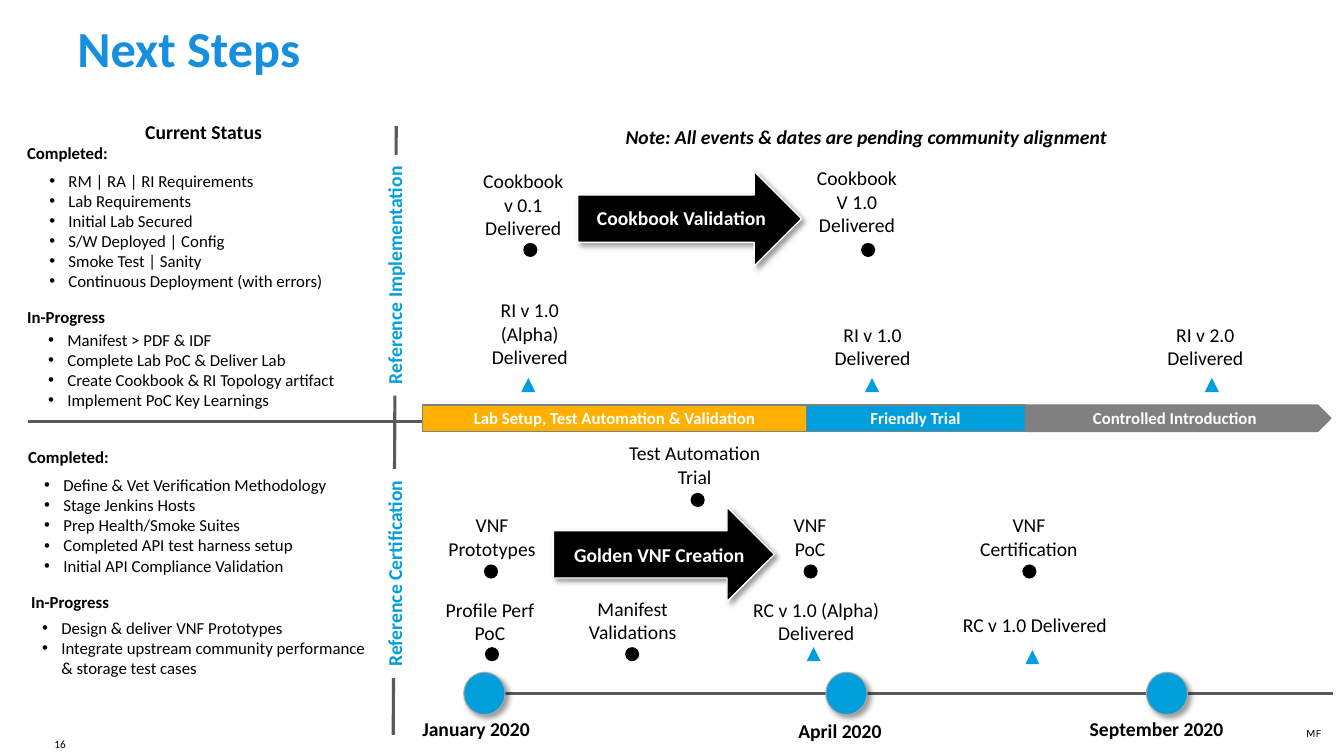
from lxml import etree
from pptx import Presentation
from pptx import util as u
from pptx.dml.color import RGBColor
from pptx.enum import shapes, text
from pptx.oxml import ns

COLORS = {
    "title": "168FDF", "blue": "009FDB", "amber": "FFB000", "gray": "808080",
    "rim": "A6A6A6", "rule": "5A5A5A", "black": "000000", "white": "FFFFFF",
}
KIND = shapes.MSO_SHAPE
CENTER = text.PP_ALIGN.CENTER
MIDDLE = text.MSO_ANCHOR.MIDDLE
MARK = 0.14


class RoadmapSlide:
    def __init__(self, deck, font="Calibri"):
        self.font = font
        self.page = deck.slides.add_slide(deck.slide_layouts[6])

    def color(self, name):
        return RGBColor.from_string(COLORS[name])

    def fill_text(self, frame, lines, size, color="black", bold=False, italic=False,
                  align=None, font=None):
        frame.text = "\n".join(lines)
        for para in frame.paragraphs:
            para.alignment = align
            for span in para.runs:
                span.font.name = font or self.font
                span.font.size = u.Pt(size)
                span.font.bold = bold
                span.font.italic = italic
                span.font.color.rgb = self.color(color)

    def label(self, at, lines, size=14, wrap=False, grow=True, **style):
        box = self.page.shapes.add_textbox(*map(u.Inches, at))
        frame = box.text_frame
        self.fill_text(frame, lines, size, **style)
        frame.word_wrap = wrap
        if grow:
            frame.auto_size = text.MSO_AUTO_SIZE.SHAPE_TO_FIT_TEXT
        return box

    def footer(self, at, words, **style):
        frame = self.label(at, [words], 8, wrap=True, grow=False, **style).text_frame
        frame.margin_left = frame.margin_right = frame.margin_top = frame.margin_bottom = 0
        frame.vertical_anchor = MIDDLE
        frame.paragraphs[0].line_spacing = u.Pt(10)

    def bullets(self, at, lines, wrap=False):
        box = self.label(at, lines, 12, wrap=wrap)
        for para in box.text_frame.paragraphs:
            props = para._p.get_or_add_pPr()
            props.set("marL", str(u.Inches(0.19)))
            props.set("indent", str(u.Inches(-0.19)))
            etree.SubElement(props, ns.qn("a:buFont")).set("typeface", "Arial")
            etree.SubElement(props, ns.qn("a:buChar")).set("char", "•")

    def side_title(self, at, words):
        box = self.label(at, [words], color="blue", bold=True, align=CENTER)
        box.fill.solid()
        box.fill.fore_color.rgb = self.color("white")
        box.rotation = 270

    def shape(self, kind, at, fill, line=None, width=1, shadow=False):
        shape = self.page.shapes.add_shape(kind, *map(u.Inches, at))
        shape.shadow.inherit = False
        shape.fill.solid()
        shape.fill.fore_color.rgb = self.color(fill)
        if line:
            shape.line.color.rgb = self.color(line)
            shape.line.width = u.Pt(width)
        else:
            shape.line.fill.background()
        if shadow:
            effects = shape._element.spPr.find(ns.qn("a:effectLst"))
            outer = etree.SubElement(effects, ns.qn("a:outerShdw"), blurRad=str(u.Pt(4)),
                                     dist=str(u.Pt(3)), dir="2700000", algn="tl",
                                     rotWithShape="0")
            tint = etree.SubElement(outer, ns.qn("a:srgbClr"), val=COLORS["black"])
            etree.SubElement(tint, ns.qn("a:alpha"), val="40000")
        return shape

    def phase(self, kind, left, width, fill, words):
        bar = self.shape(kind, (left, 4.02, width, 0.26), fill, "gray")
        frame = bar.text_frame
        self.fill_text(frame, [words], 12, "white", bold=True, align=CENTER)
        frame.word_wrap = True
        frame.vertical_anchor = MIDDLE
        frame.margin_left = frame.margin_right = u.Inches(0.1)
        frame.margin_top = frame.margin_bottom = u.Inches(0.1)
        frame.paragraphs[0].space_after = u.Pt(8)

    def rule(self, x1, y1, x2, y2):
        line = self.page.shapes.add_connector(
            shapes.MSO_CONNECTOR.STRAIGHT, *map(u.Inches, (x1, y1, x2, y2)))
        line.line.color.rgb = self.color("rule")
        line.line.width = u.Pt(2.25)
        etree.SubElement(line._element.spPr, ns.qn("a:effectLst"))

    def milestone(self, kind, mark, at, lines, wrap=False):
        fill = "black" if kind == KIND.OVAL else "blue"
        self.shape(kind, (*mark, MARK, MARK), fill)
        self.label(at, lines, wrap=wrap, align=CENTER)

    def arrow(self, at, label_at, words):
        self.shape(KIND.RIGHT_ARROW, at, "black", "white", shadow=True)
        self.label(label_at, [words], wrap=True, color="white", bold=True, align=CENTER)

    def date(self, left, label_at, words):
        self.shape(KIND.OVAL, (left, 6.67, 0.41, 0.42), "blue", "rim", 0.75, shadow=True)
        self.label(label_at, [words], bold=True)


DOT, FLAG = KIND.OVAL, KIND.ISOSCELES_TRIANGLE
MILESTONES = [
    (DOT, (5.19, 2.41), (4.69, 1.63, 1, 0.81), ["Cookbook", "v 0.1", "Delivered"]),
    (DOT, (8.54, 2.41), (8, 1.6, 1, 0.81), ["Cookbook", "V 1.0", "Delivered"]),
    (FLAG, (5.17, 3.75), (4.77, 2.91, 0.97, 0.81), ["RI v 1.0", "(Alpha)", "Delivered"]),
    (FLAG, (8.58, 3.75), (8.17, 3.15, 0.97, 0.57), ["RI v 1.0", "Delivered"]),
    (FLAG, (11.95, 3.75), (11.47, 3.15, 0.97, 0.57), ["RI v 2.0", "Delivered"]),
    (DOT, (6.85, 4.89), (6.12, 4.33, 1.54, 0.57), ["Test Automation", "Trial"]),
    (DOT, (4.8, 5.6), (4.34, 5.04, 1.08, 0.57), ["VNF", "Prototypes"]),
    (DOT, (7.97, 5.6), (7.75, 5.04, 0.57, 0.57), ["VNF", "PoC"]),
    (DOT, (10.14, 5.6), (9.61, 5.04, 1.19, 0.57), ["VNF", "Certification"]),
    (DOT, (4.81, 6.42), (4.31, 5.88, 1.1, 0.57), ["Profile Perf", "PoC"]),
    (DOT, (6.2, 6.42), (5.73, 5.87, 1.09, 0.57), ["Manifest", "Validations"]),
    (FLAG, (8, 6.42), (7.3, 5.88, 1.59, 0.57), ["RC v 1.0 (Alpha)", "Delivered"], True),
    (FLAG, (10.17, 6.45), (9.28, 6.03, 1.97, 0.34), ["RC v 1.0 Delivered"], True),
]
STATUS = [
    ("Completed:", (0.17, 1.37, 1.05, 0.3), (0.39, 1.64, 2.95, 1.51), False,
     ["RM | RA | RI Requirements", "Lab Requirements", "Initial Lab Secured",
      "S/W Deployed | Config", "Smoke Test | Sanity",
      "Continuous Deployment (with errors)"]),
    ("In-Progress", (0.17, 2.99, 0.99, 0.3), (0.38, 3.22, 3.1, 1.11), False,
     ["Manifest > PDF & IDF", "Complete Lab PoC & Deliver Lab",
      "Create Cookbook & RI Topology artifact", "Implement PoC Key Learnings"]),
    ("Completed:", (0.18, 4.38, 1.05, 0.3), (0.34, 4.66, 3.43, 1.11), True,
     ["Define & Vet Verification Methodology", "Stage Jenkins Hosts",
      "Prep Health/Smoke Suites", "Completed API test harness setup",
      "Initial API Compliance Validation"]),
    ("In-Progress", (0.21, 5.82, 0.99, 0.3), (0.32, 6.08, 3.53, 1.01), True,
     ["Design & deliver VNF Prototypes",
      "Integrate upstream community performance & storage test cases"]),
]


def main():
    deck = Presentation()
    deck.slide_width, deck.slide_height = u.Inches(13.33), u.Inches(7.5)
    slide = RoadmapSlide(deck)

    title = slide.label((0.67, 0, 11.96, 1.02), ["Next Steps"], 36, wrap=True,
                        grow=False, color="title", bold=True)
    title.text_frame.vertical_anchor = MIDDLE
    title.text_frame.paragraphs[0].line_spacing = 0.9

    slide.rule(4.85, 6.88, 13.22, 6.88)
    slide.date(4.6, (4.09, 7.06, 1.28, 0.34), "January 2020")
    slide.date(8.19, (7.82, 7.08, 1.04, 0.34), "April 2020")
    slide.date(11.37, (10.71, 7.06, 1.54, 0.34), "September 2020")

    slide.rule(3.9, 7.29, 3.93, 1.25)
    slide.rule(0.28, 4.18, 12.95, 4.18)
    slide.side_title((2.88, 5.52, 2.07, 0.34), "Reference Certification")
    slide.side_title((2.72, 2.56, 2.39, 0.34), "Reference Implementation")

    slide.phase(KIND.RECTANGLE, 7.99, 2.18, "blue", "Friendly Trial")
    slide.phase(KIND.PENTAGON, 10.17, 3.03, "gray", "Controlled Introduction")
    slide.phase(KIND.RECTANGLE, 4.19, 3.81, "amber",
                "Lab Setup, Test Automation & Validation")

    slide.label((1.04, 1.14, 1.96, 0.34), ["Current Status"], wrap=True,
                bold=True, align=CENTER)
    slide.label((6.08, 1.19, 5.03, 0.34),
                ["Note: All events & dates are pending community alignment"],
                bold=True, italic=True, align=CENTER)
    for heading, heading_at, list_at, wrap, items in STATUS:
        slide.label(heading_at, [heading], 12, bold=True)
        slide.bullets(list_at, items, wrap)

    for milestone in MILESTONES:
        slide.milestone(*milestone)
    slide.arrow((5.73, 1.7, 2.22, 0.94), (5.61, 1.99, 2.3, 0.34), "Cookbook Validation")
    slide.arrow((5.49, 5.03, 2.19, 0.94), (5.44, 5.34, 2.2, 0.34), "Golden VNF Creation")

    slide.footer((0.54, 7.25, 0.32, 0.25), "16")
    slide.footer((12.87, 7.14, 0.32, 0.25), "MF", align=CENTER, font="Karla")
    deck.save("out.pptx")


if __name__ == "__main__":
    main()
